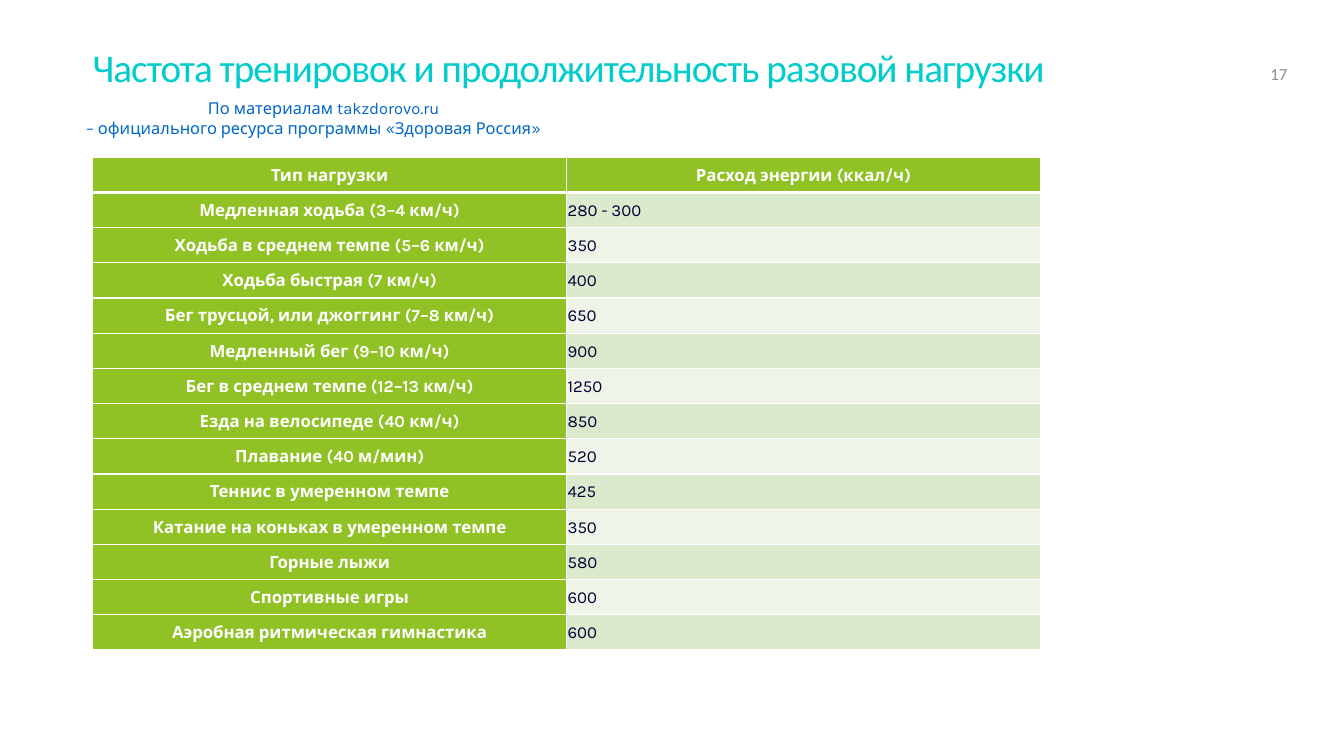
from lxml import etree
from pptx import Presentation
from pptx.dml.color import RGBColor
from pptx.enum.text import MSO_ANCHOR, PP_ALIGN
from pptx.oxml.ns import qn
from pptx.util import Inches, Pt

LEFT, CENTER = PP_ALIGN.LEFT, PP_ALIGN.CENTER
TOP, MIDDLE, BOTTOM = MSO_ANCHOR.TOP, MSO_ANCHOR.MIDDLE, MSO_ANCHOR.BOTTOM

TITLE = "Частота тренировок и продолжительность разовой нагрузки"
PAGE_NUMBER = "17"
SOURCE_LINES = [
    "По материалам takzdorovo.ru",
    "– официального ресурса программы «Здоровая Россия»",
]
ROWS = [
    ("Тип нагрузки", "Расход энергии (ккал/ч)"),
    ("Медленная ходьба (3–4 км/ч)", "280 - 300"),
    ("Ходьба в среднем темпе (5–6 км/ч)", "350"),
    ("Ходьба быстрая (7 км/ч)", "400"),
    ("Бег трусцой, или джоггинг (7–8 км/ч)", "650"),
    ("Медленный бег (9–10 км/ч)", "900"),
    ("Бег в среднем темпе (12–13 км/ч)", "1250"),
    ("Езда на велосипеде (40 км/ч)", "850"),
    ("Плавание (40 м/мин)", "520"),
    ("Теннис в умеренном темпе", "425"),
    ("Катание на коньках в умеренном темпе", "350"),
    ("Горные лыжи", "580"),
    ("Спортивные игры", "600"),
    ("Аэробная ритмическая гимнастика", "600"),
]
WHITE, GREEN, NAVY = "FFFFFF", "90C226", "000033"
BANDS = ["EEF4E8", "DBE9CD"]
MARGIN, TABLE_TOP, TABLE_WIDTH, TABLE_HEIGHT = 0.92, 1.56, 9.4, 4.89


def color(value):
    return RGBColor.from_string(value)


def style(paragraph, name, size, value, align=LEFT, bold=False):
    paragraph.alignment = align
    font = paragraph.font
    font.name, font.size, font.bold = name, Pt(size), bold
    font.color.rgb = color(value)


def add_text(slide, box, lines, anchor, insets, wrap=True):
    frame = slide.shapes.add_textbox(*map(Inches, box)).text_frame
    frame.word_wrap = wrap
    frame.vertical_anchor = anchor
    frame.margin_left = frame.margin_right = Inches(insets[0])
    frame.margin_top = frame.margin_bottom = Inches(insets[1])
    frame.text = "\n".join(lines)
    return frame.paragraphs


def add_borders(cell, widths):
    properties = cell._tc.get_or_add_tcPr()
    for position, (side, width) in enumerate(widths.items()):
        line = etree.Element(qn(f"a:{side}"), w=str(Pt(width)))
        fill = etree.SubElement(line, qn("a:solidFill"))
        etree.SubElement(fill, qn("a:srgbClr"), val=WHITE)
        properties.insert(position, line)


def fill_cell(cell, text, row, column):
    is_heading = row == 0 or column == 0
    cell.text = text
    cell.vertical_anchor = MIDDLE
    cell.margin_left = cell.margin_right = Inches(0.01)
    cell.margin_top = cell.margin_bottom = Inches(0.01)
    cell.fill.solid()
    cell.fill.fore_color.rgb = color(GREEN if is_heading else BANDS[row % 2])
    paragraph = cell.text_frame.paragraphs[0]
    paragraph.line_spacing = 1.07
    style(paragraph, "Karla", 12, WHITE if is_heading else NAVY,
          CENTER if is_heading else LEFT, is_heading)
    add_borders(cell, {"lnL": 1, "lnR": 1,
                       "lnT": 3 if row == 1 else 1,
                       "lnB": 3 if row == 0 else 1})


def add_energy_table(slide):
    box = MARGIN, TABLE_TOP, TABLE_WIDTH, TABLE_HEIGHT
    table = slide.shapes.add_table(len(ROWS), 2, *map(Inches, box)).table
    for row, texts in enumerate(ROWS):
        table.rows[row].height = Inches(TABLE_HEIGHT / len(ROWS))
        for column, text in enumerate(texts):
            fill_cell(table.cell(row, column), text, row, column)


def main():
    presentation = Presentation()
    presentation.slide_width, presentation.slide_height = Inches(13.33), Inches(7.5)
    slide = presentation.slides.add_slide(presentation.slide_layouts[6])

    title = add_text(slide, (MARGIN, 0.4, 11.5, 1.03), [TITLE], TOP, (0, 0.05))[0]
    style(title, "Calibri", 28, "00CCCC")
    title.line_spacing = Pt(32)
    title.runs[0]._r.get_or_add_rPr().set("spc", "-70")

    number = add_text(slide, (12.6, 0.4, 0.51, 0.47), [PAGE_NUMBER], BOTTOM, (0, 0.04), False)[0]
    style(number, "Calibri", 12, "8C8C90")

    source = add_text(slide, (0.61, 0.87, 5, 0.6), SOURCE_LINES, MIDDLE, (0.1, 0.05))
    for paragraph in source:
        style(paragraph, "Karla", 11.7, "0066CC", CENTER)
    source[0]._p.get_or_add_pPr().set("marL", str(Inches(0.2)))

    add_energy_table(slide)
    presentation.save("out.pptx")


if __name__ == "__main__":
    main()
